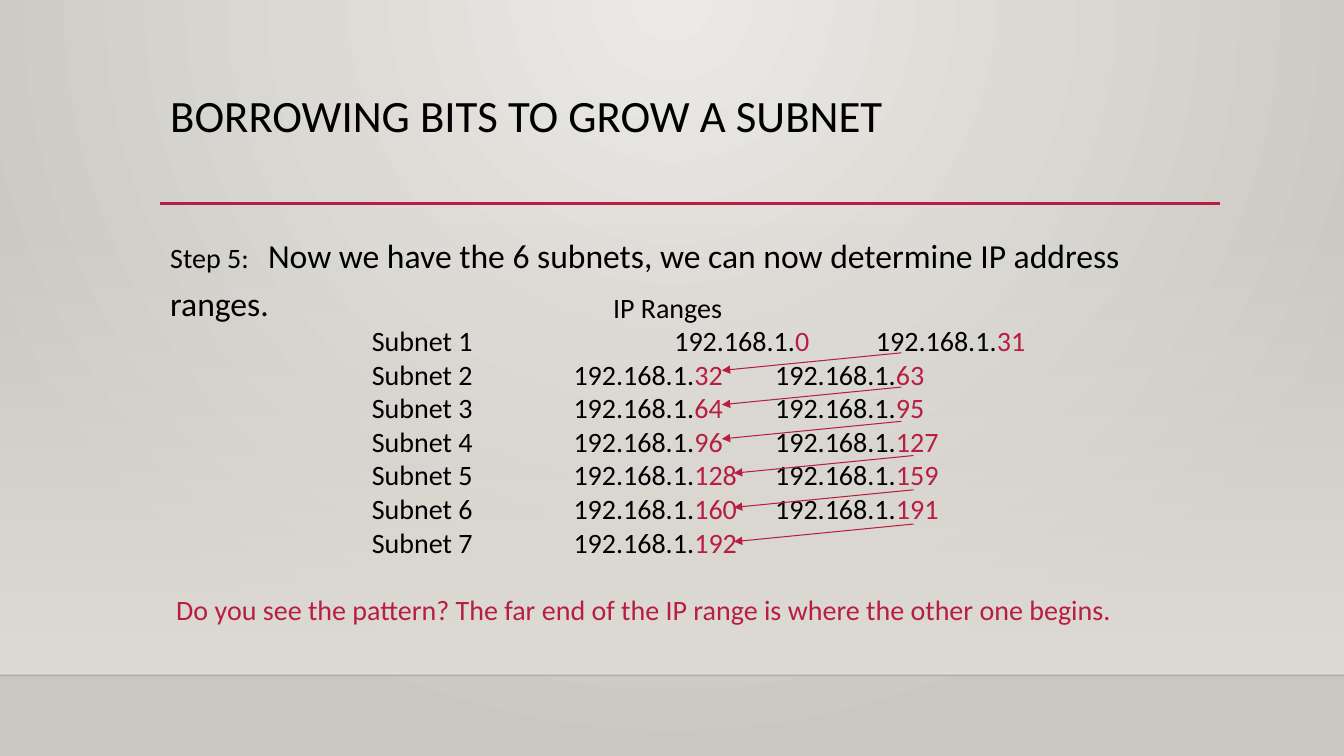
from lxml import etree
from pptx import Presentation
from pptx.dml.color import RGBColor
from pptx.enum.shapes import MSO_CONNECTOR, MSO_SHAPE
from pptx.enum.text import MSO_ANCHOR
from pptx.oxml.ns import qn
from pptx.util import Emu, Inches, Pt

STRAIGHT = MSO_CONNECTOR.STRAIGHT
RECTANGLE = MSO_SHAPE.RECTANGLE
TOP = MSO_ANCHOR.TOP
INK, ACCENT, HAZE = "000000", "B71E42", "DFDBD5"
LEFT, WIDTH = 11.93, 78.77


def rgb(code):
    """Turn a hex string into a colour."""
    return RGBColor.from_string(code)


def child(parent, tag, **attributes):
    """Append an XML element with the given attributes."""
    return etree.SubElement(parent, qn(tag), attributes)


class Deck:
    """Hold the style and the slide; lengths are percent of the slide's size."""

    def __init__(self, width, height, font):
        """Start a presentation with one blank slide."""
        self.presentation = Presentation()
        self.presentation.slide_width = Inches(width)
        self.presentation.slide_height = Inches(height)
        self.slide = self.presentation.slides.add_slide(self.presentation.slide_layouts[6])
        self.font = font

    def x(self, share):
        """Convert a share of the width."""
        return Emu(int(self.presentation.slide_width * share / 100))

    def y(self, share):
        """Convert a share of the height."""
        return Emu(int(self.presentation.slide_height * share / 100))

    def frame(self, left, top, width, height):
        """Convert a whole rectangle."""
        return self.x(left), self.y(top), self.x(width), self.y(height)

    def gradient(self, fill, first, last):
        """Set a two-stop gradient."""
        fill.gradient()
        for stop, colour, position in zip(fill.gradient_stops, (first, last), (0, 1)):
            stop.color.rgb = rgb(colour)
            stop.position = position

    def backdrop(self, centre, edge):
        """Paint a glow from the top centre of the slide."""
        self.gradient(self.slide.background.fill, centre, edge)
        glow = self.slide.element.find(".//" + qn("a:gradFill"))
        glow.remove(glow.find(qn("a:lin")))
        circle = child(glow, "a:path", path="circle")
        child(circle, "a:fillToRect", l="43000", t="0", r="43000", b="100000")

    def veil(self, left, top, width, height, colour):
        """Add a rectangle that fades in downwards."""
        veil = self.slide.shapes.add_shape(RECTANGLE, *self.frame(left, top, width, height))
        veil.shadow.inherit = False
        veil.line.fill.background()
        self.gradient(veil.fill, colour, colour)
        veil.fill.gradient_angle = 270
        child(veil.element.find(".//" + qn("a:srgbClr")), "a:alpha", val="0")

    def line(self, x1, y1, x2, y2, colour, weight, opacity=100, arrow=False):
        """Add a straight line, optionally with an arrowhead."""
        line = self.slide.shapes.add_connector(
            STRAIGHT, self.x(x1), self.y(y1), self.x(x2), self.y(y2))
        line.line.color.rgb = rgb(colour)
        line.line.width = Pt(weight)
        outline = line.element.find(".//" + qn("a:ln"))
        if opacity < 100:
            child(outline.find(".//" + qn("a:srgbClr")), "a:alpha", val=str(opacity * 1000))
        if arrow:
            child(outline, "a:tailEnd", type="triangle")
        child(line.element.spPr, "a:effectLst")

    def text_box(self, left, top, width, height, inset=True):
        """Add an empty wrapping text box and return its text frame."""
        box = self.slide.shapes.add_textbox(*self.frame(left, top, width, height))
        text = box.text_frame
        text.word_wrap = True
        text.vertical_anchor = TOP
        if not inset:
            text.margin_left = text.margin_right = text.margin_top = text.margin_bottom = 0
        return text

    def compose(self, paragraph, parts, spacing, tabs=(), before=0, indent=0):
        """Fill a paragraph with (text, size, colour) parts."""
        properties = paragraph._p.get_or_add_pPr()
        properties.set("marL", str(Inches(indent)))
        if tabs:
            stops = child(properties, "a:tabLst")
            for tab in tabs:
                child(stops, "a:tab", pos=str(Inches(tab)), algn="l")
        paragraph.line_spacing = spacing
        paragraph.space_before = Pt(before)
        for words, size, colour in parts:
            run = paragraph.add_run()
            run.text = words
            run.font.name = self.font
            run.font.size = Pt(size)
            run.font.color.rgb = rgb(colour)


def main():
    """Build the subnet slide."""
    deck = Deck(13.33, 7.5, "Calibri")
    deck.backdrop("ECEAE7", "CAC7C1")
    deck.veil(0, 29.47, 100, 59.87, HAZE)
    deck.line(0, 89.33, 100, 89.33, "000001", 1, opacity=20)
    deck.line(LEFT, 26.93, 90.77, 26.93, ACCENT, 2.5)

    title = deck.text_box(LEFT, 11.73, WIDTH, 15.33)
    deck.compose(title.paragraphs[0], [("BORROWING BITS TO GROW A SUBNET", 32, INK)], 0.9)

    body = deck.text_box(LEFT, 29.33, WIDTH, 55.73)
    step = "Now we have the 6 subnets, we can now determine IP address ranges."
    deck.compose(body.paragraphs[0], [("Step 5:\t", 20, INK), (step, 24, INK)], 1.2, [0.97])

    row_height = Pt(24)
    block = 32
    for index in range(7):
        first = index * block
        parts = [(f"\tSubnet {index + 1}\t192.168.1.", 20, INK), (str(first), 20, ACCENT)]
        if index < 6:
            parts += [("\t192.168.1.", 20, INK), (str(first + block - 1), 20, ACCENT)]
        tabs = [2, 4, 6] if index else [2, 5, 7]
        deck.compose(body.add_paragraph(), parts, row_height, tabs)
    question = "Do you see the pattern? The far end of the IP range is where the other one begins."
    deck.compose(body.add_paragraph(), [(question, 20, ACCENT)], row_height,
                 before=24, indent=0.06)

    heading = deck.text_box(45.61, 38.4, 11.25, 4.67, inset=False)
    deck.compose(heading.paragraphs[0], [("IP Ranges", 20, INK)], 1.0)

    for index in range(6):
        shift = 0.9 if index >= 3 else 0
        start = 46.67 + 4.53 * index
        deck.line(67.07 + shift, start, 53.71 + shift, start + 2.33, ACCENT, 0.75, arrow=True)

    deck.presentation.save("out.pptx")


if __name__ == "__main__":
    main()
